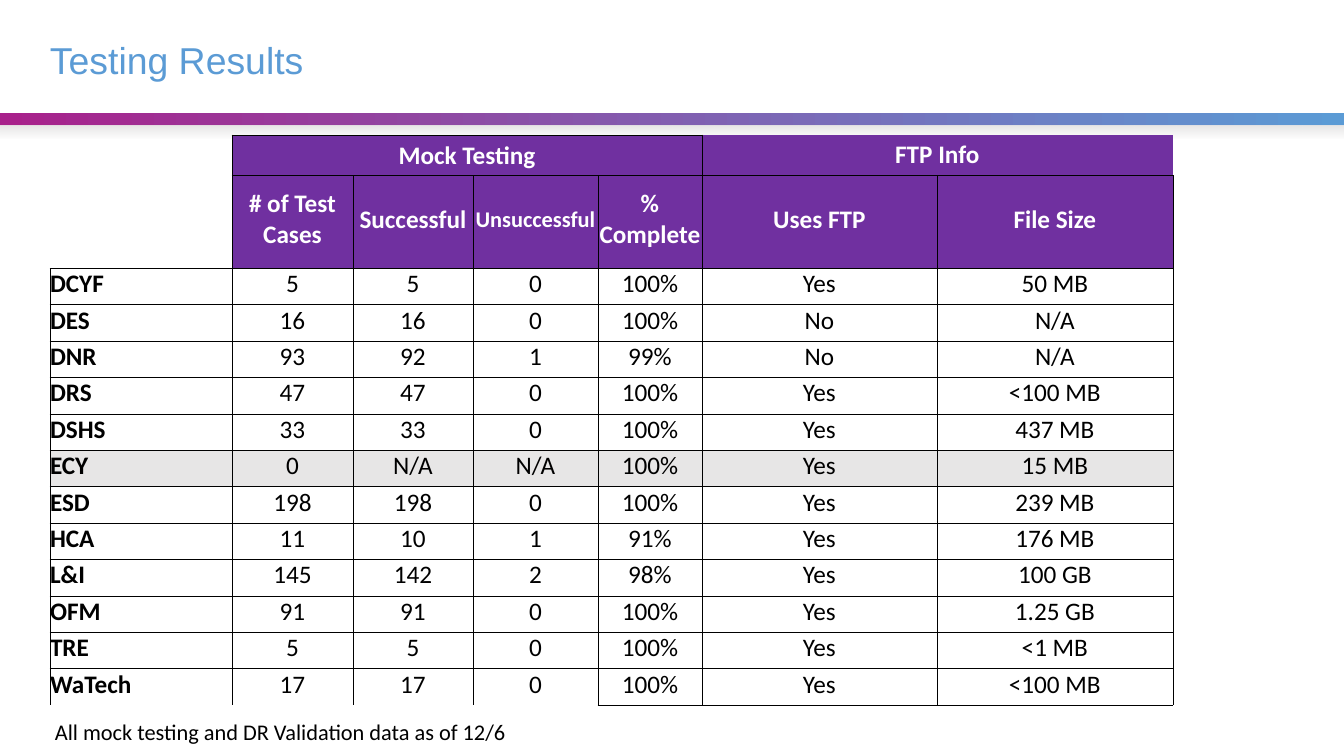
"""Build the Testing Results slide with its mock testing and FTP table."""
from lxml.etree import SubElement
from pptx import Presentation
from pptx.dml.color import RGBColor
from pptx.enum.shapes import MSO_SHAPE
from pptx.enum.text import MSO_ANCHOR, MSO_AUTO_SIZE, PP_ALIGN
from pptx.oxml.ns import qn
from pptx.util import Pt

TITLE = "Testing Results"
FOOTNOTE = "All mock testing and DR Validation data as of 12/6"
HEADINGS = ("", "# of Test Cases", "Successful", "Unsuccessful", "% Complete", "Uses FTP", "File Size")
GROUPS = ("", "Mock Testing", "", "", "", "FTP Info", "")
AGENCIES = [
    ("DCYF", "5", "5", "0", "100%", "Yes", "50 MB"),
    ("DES", "16", "16", "0", "100%", "No", "N/A"),
    ("DNR", "93", "92", "1", "99%", "No", "N/A"),
    ("DRS", "47", "47", "0", "100%", "Yes", "<100 MB"),
    ("DSHS", "33", "33", "0", "100%", "Yes", "437 MB"),
    ("ECY", "0", "N/A", "N/A", "100%", "Yes", "15 MB"),
    ("ESD", "198", "198", "0", "100%", "Yes", "239 MB"),
    ("HCA", "11", "10", "1", "91%", "Yes", "176 MB"),
    ("L&I", "145", "142", "2", "98%", "Yes", "100 GB"),
    ("OFM", "91", "91", "0", "100%", "Yes", "1.25 GB"),
    ("TRE", "5", "5", "0", "100%", "Yes", "<1 MB"),
    ("WaTech", "17", "17", "0", "100%", "Yes", "<100 MB"),
]
SHADED_AGENCY = "ECY"

BLACK = RGBColor(0x00, 0x00, 0x00)
WHITE = RGBColor(0xFF, 0xFF, 0xFF)
BLUE = RGBColor(0x5B, 0x9B, 0xD5)
MAGENTA = RGBColor(0xA8, 0x21, 0x8B)
PURPLE = RGBColor(0x70, 0x30, 0xA0)
GREY = RGBColor(0xE7, 0xE6, 0xE6)

PX = 914400 / 100.8
SLIDE_WIDTH, SLIDE_HEIGHT = 1344, 756
TABLE_LEFT, TABLE_TOP, TABLE_HEIGHT = 50, 135, 570
COLUMN_WIDTHS = (182, 121, 120, 125, 104, 235, 236)
HEADER_HEIGHTS = (40, 93)
CELL_BOTTOM_MARGIN = 5
NO_STYLE = "{2D5ABB26-0587-4C30-8999-92F81FD0307C}"


def px(*lengths):
    return [round(length * PX) for length in lengths]


def add_span(para, text, size, color, font="Calibri", bold=False):
    span = para.add_run()
    span.text = text
    span.font.name = font
    span.font.size = Pt(size)
    span.font.bold = bold
    span.font.color.rgb = color


def add_band(page, area, colors, angle):
    band = page.shapes.add_shape(MSO_SHAPE.RECTANGLE, *px(*area))
    band.shadow.inherit = False
    band.line.fill.background()
    band.fill.gradient()
    band.fill.gradient_angle = angle
    for stop, color in zip(band.fill.gradient_stops, colors):
        stop.color.rgb = color
    return band


def add_text(page, area, text, size, color, font):
    box = page.shapes.add_textbox(*px(*area))
    box.text_frame.word_wrap = True
    add_span(box.text_frame.paragraphs[0], text, size, color, font)
    return box.text_frame


def border_sides(row, column, last_row):
    if row == 0:
        return {0: "R", 5: "LB", 6: "B"}.get(column, "LRTB")
    if row == 1 and column == 0:
        return "RB"
    if row == last_row and column < 4:
        return "LRT"
    return "LRTB"


def set_borders(cell, sides):
    properties = cell._tc.get_or_add_tcPr()
    for index, side in enumerate("LRTB"):
        line = SubElement(properties, qn(f"a:ln{side}"), w=str(Pt(0.5)))
        if side in sides:
            fill = SubElement(line, qn("a:solidFill"))
            SubElement(fill, qn("a:srgbClr"), val=str(BLACK))
        else:
            SubElement(line, qn("a:noFill"))
        properties.insert(index, line)


def fill_cell(cell, text, row, column):
    header = row < len(HEADER_HEIGHTS)
    if header and column:
        cell.fill.solid()
        cell.fill.fore_color.rgb = PURPLE
    elif not header and AGENCIES[row - len(HEADER_HEIGHTS)][0] == SHADED_AGENCY:
        cell.fill.solid()
        cell.fill.fore_color.rgb = GREY
    else:
        cell.fill.background()
    if not text:
        return
    if text == "Mock Testing":
        cell.vertical_anchor = MSO_ANCHOR.TOP
    else:
        cell.vertical_anchor = MSO_ANCHOR.BOTTOM if row == 0 else MSO_ANCHOR.MIDDLE
        cell.margin_left = cell.margin_right = cell.margin_top = 0
        cell.margin_bottom = px(CELL_BOTTOM_MARGIN)[0]
    para = cell.text_frame.paragraphs[0]
    para.alignment = PP_ALIGN.CENTER if column else PP_ALIGN.LEFT
    size = 16 if text == "Unsuccessful" else 18
    add_span(para, text, size, WHITE if header else BLACK, bold=header or column == 0)


def add_results(page):
    rows = [GROUPS, HEADINGS, *AGENCIES]
    area = (TABLE_LEFT, TABLE_TOP, sum(COLUMN_WIDTHS), TABLE_HEIGHT)
    table = page.shapes.add_table(len(rows), len(COLUMN_WIDTHS), *px(*area)).table
    table.first_row = table.horz_banding = False
    table._tbl.tblPr.find(qn("a:tableStyleId")).text = NO_STYLE
    for column, width in zip(table.columns, px(*COLUMN_WIDTHS)):
        column.width = width
    agency_height = (TABLE_HEIGHT - sum(HEADER_HEIGHTS)) / len(AGENCIES)
    heights = [*HEADER_HEIGHTS, *[agency_height] * len(AGENCIES)]
    for row, height in zip(table.rows, px(*heights)):
        row.height = height
    table.cell(0, 1).merge(table.cell(0, 4))
    table.cell(0, 5).merge(table.cell(0, 6))
    for row, texts in enumerate(rows):
        for column, text in enumerate(texts):
            cell = table.cell(row, column)
            fill_cell(cell, text, row, column)
            set_borders(cell, border_sides(row, column, len(rows) - 1))


def main():
    deck = Presentation()
    deck.slide_width, deck.slide_height = px(SLIDE_WIDTH, SLIDE_HEIGHT)
    page = deck.slides.add_slide(deck.slide_layouts[6])

    add_band(page, (0, 113, SLIDE_WIDTH, 13), (MAGENTA, BLUE), 0)
    fade = add_band(page, (0, 126, SLIDE_WIDTH, 13), (GREY, GREY), 270)
    colors = list(fade._element.spPr.iter(qn("a:srgbClr")))
    SubElement(colors[-1], qn("a:alpha"), val="0")

    title = add_text(page, (50, 25, 1243, 76), TITLE, 26.7, BLUE, "Arial")
    title.vertical_anchor = MSO_ANCHOR.MIDDLE
    title.margin_left = title.margin_right = title.margin_top = title.margin_bottom = 0
    title.paragraphs[0].line_spacing = Pt(26.7)

    footnote = add_text(page, (45, 713, 695, 37), FOOTNOTE, 16, BLACK, "Calibri")
    footnote.auto_size = MSO_AUTO_SIZE.SHAPE_TO_FIT_TEXT

    add_results(page)
    deck.save("out.pptx")


if __name__ == "__main__":
    main()
